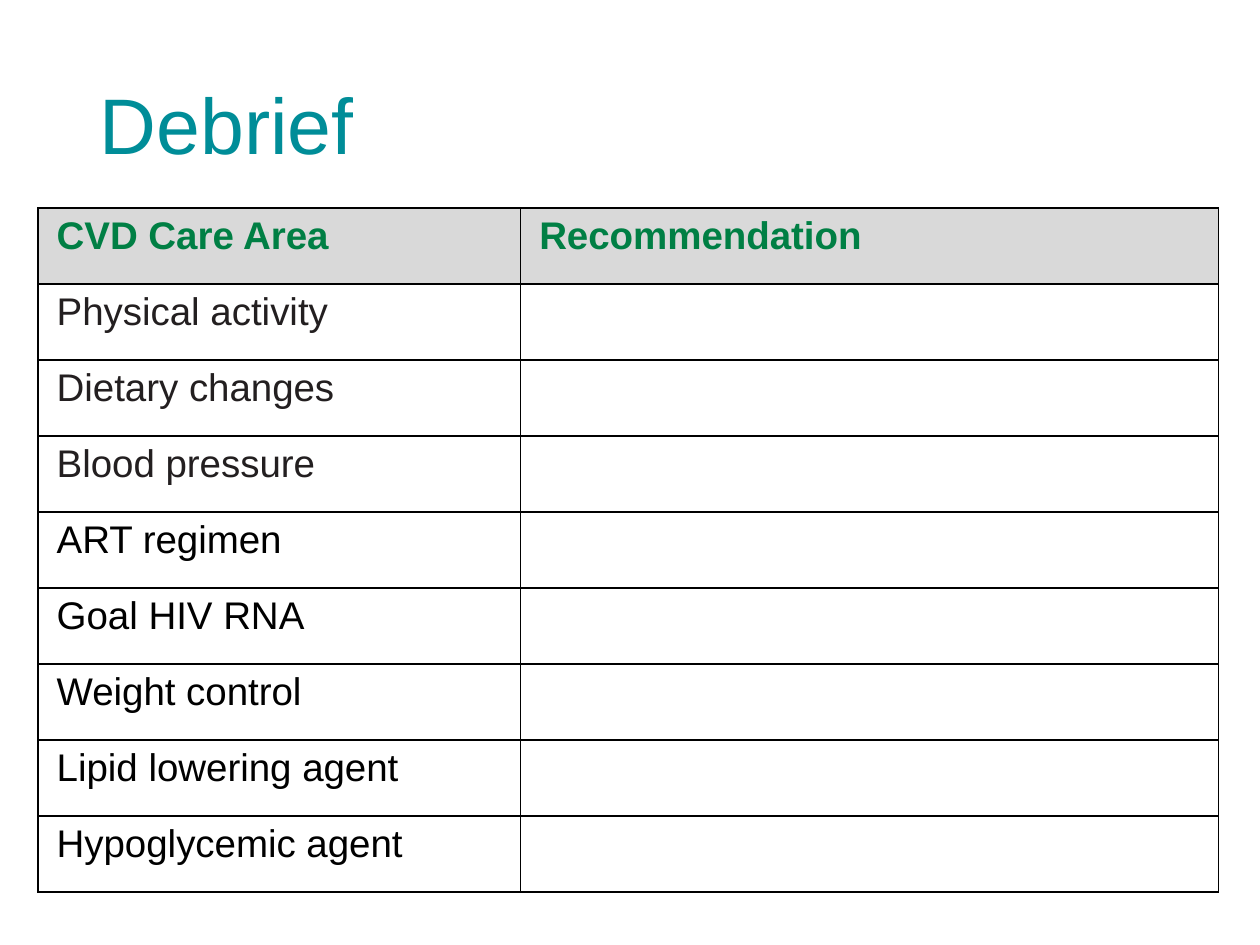
from dataclasses import dataclass

from lxml.etree import SubElement
from pptx import Presentation
from pptx.dml.color import RGBColor
from pptx.enum.text import MSO_ANCHOR, PP_ALIGN
from pptx.oxml.ns import qn
from pptx.table import _Cell as Cell
from pptx.util import Inches, Pt

FONT = "Arial"
COLORS = {
    "title": "008D98",
    "heading": "007F44",
    "heading_fill": "D9D9D9",
    "dark": "231F20",
    "black": "000000",
}


@dataclass
class CareRow:
    area: str
    recommendation: str = ""
    color: str = "black"
    heading: bool = False


ROWS = [
    CareRow("CVD Care Area", "Recommendation", "heading", heading=True),
    CareRow("Physical activity", color="dark"),
    CareRow("Dietary changes", color="dark"),
    CareRow("Blood pressure", color="dark"),
    CareRow("ART regimen"),
    CareRow("Goal HIV RNA"),
    CareRow("Weight control"),
    CareRow("Lipid lowering agent"),
    CareRow("Hypoglycemic agent"),
]
COLUMN_WIDTHS = (3.83, 5.54)
TABLE_HEIGHT = 5.43


def rgb(name: str) -> RGBColor:
    return RGBColor.from_string(COLORS[name])


def add_borders(cell: Cell) -> None:
    """Put a 1 pt black line on every side; call before setting the fill."""
    tc_pr = cell._tc.get_or_add_tcPr()
    for side in ("lnL", "lnR", "lnT", "lnB"):
        line = SubElement(tc_pr, qn(f"a:{side}"), w=str(Pt(1)))
        fill = SubElement(line, qn("a:solidFill"))
        SubElement(fill, qn("a:srgbClr"), val=COLORS["black"])


def fill_cell(cell: Cell, text: str, row: CareRow) -> None:
    add_borders(cell)
    if row.heading:
        cell.fill.solid()
        cell.fill.fore_color.rgb = rgb("heading_fill")
    else:
        cell.fill.background()
    cell.margin_left = cell.margin_right = Inches(0.15)
    cell.margin_top, cell.margin_bottom = Inches(0.02), 0
    cell.text_frame.text = text
    p = cell.text_frame.paragraphs[0]
    p.line_spacing = 1.1
    p.font.size = Pt(22)
    for r in p.runs:
        r.font.name = FONT
        r.font.size = Pt(22)
        r.font.bold = row.heading
        r.font.color.rgb = rgb(row.color)


def main() -> None:
    prs = Presentation()
    prs.slide_width, prs.slide_height = Inches(10), Inches(7.5)
    s = prs.slides.add_slide(prs.slide_layouts[5])

    title = s.shapes.title
    title.left, title.top = Inches(0.69), Inches(0.2)
    title.width, title.height = Inches(8.62), Inches(1.65)
    tf = title.text_frame
    tf.text = "Debrief"
    tf.vertical_anchor = MSO_ANCHOR.MIDDLE
    p = tf.paragraphs[0]
    p.alignment = PP_ALIGN.LEFT
    p.line_spacing = 0.9
    r = p.runs[0]
    r.font.name = FONT
    r.font.size = Pt(45)
    r.font.color.rgb = rgb("title")

    table = s.shapes.add_table(
        len(ROWS), len(COLUMN_WIDTHS), Inches(0.3), Inches(1.65),
        Inches(sum(COLUMN_WIDTHS)), Inches(TABLE_HEIGHT),
    ).table
    table.horz_banding = False
    for column, width in zip(table.columns, COLUMN_WIDTHS):
        column.width = Inches(width)
    for i, row in enumerate(ROWS):
        fill_cell(table.cell(i, 0), row.area, row)
        fill_cell(table.cell(i, 1), row.recommendation, row)

    prs.save("out.pptx")


if __name__ == "__main__":
    main()
